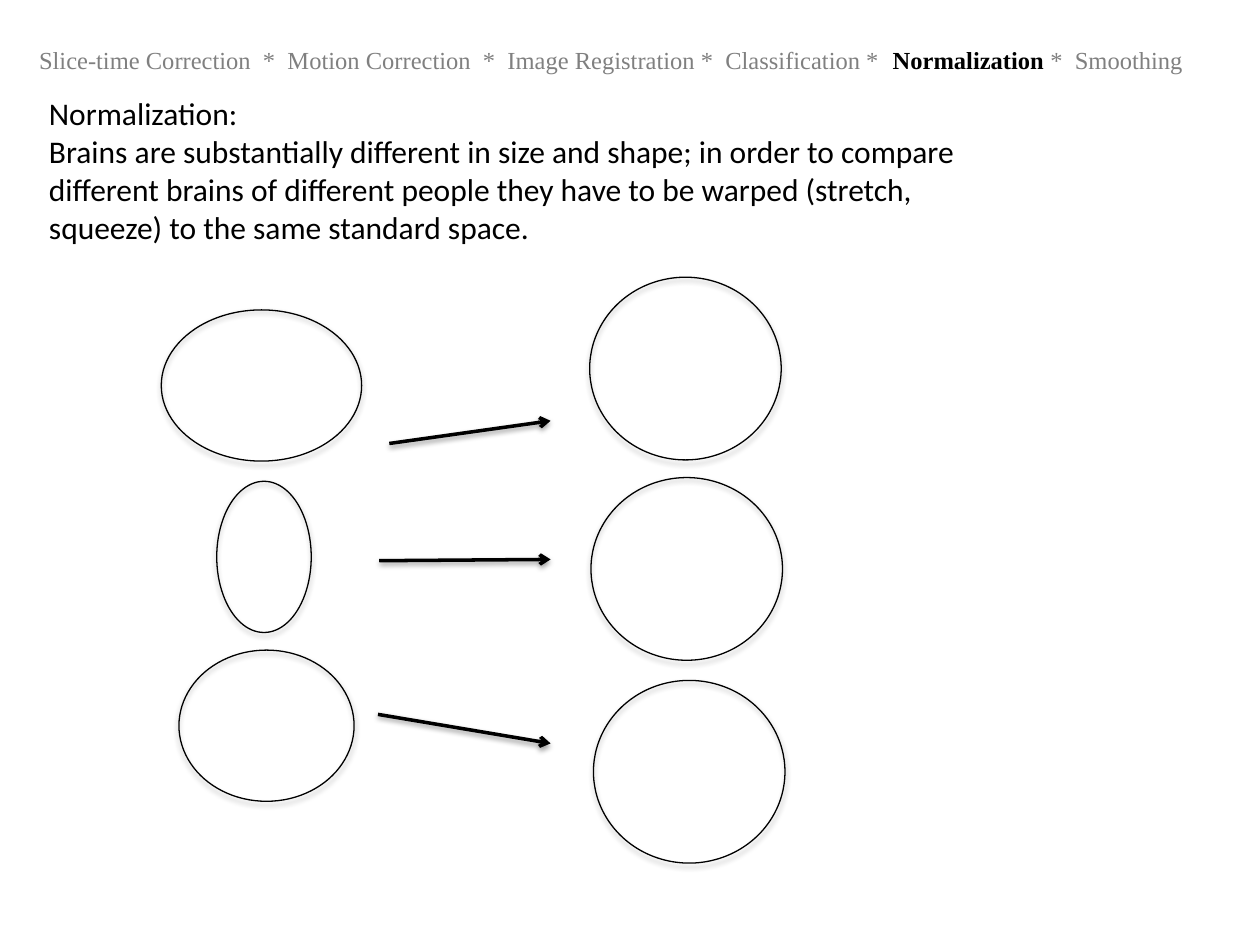
from dataclasses import dataclass

from lxml.etree import SubElement
from pptx import Presentation
from pptx.dml.color import RGBColor
from pptx.enum.shapes import MSO_CONNECTOR, MSO_SHAPE
from pptx.enum.text import MSO_ANCHOR, MSO_AUTO_SIZE, PP_ALIGN
from pptx.oxml.ns import qn
from pptx.util import Inches, Pt


@dataclass(frozen=True)
class Theme:
    ink: RGBColor = RGBColor(0x00, 0x00, 0x00)
    muted: RGBColor = RGBColor(0x80, 0x80, 0x80)
    title_font: str = "Times New Roman"
    body_font: str = "Calibri"
    title_size: Pt = Pt(14)
    body_size: Pt = Pt(18)
    outline: Pt = Pt(0.75)
    arrow: Pt = Pt(2)


class SlideBuilder:
    def __init__(self, slide, theme):
        self.s = slide
        self.theme = theme

    def trail(self, before, current, after, left, top, width, height):
        """Title line listing the processing steps, the current one in bold."""
        sp = self.s.shapes.title
        sp.left, sp.top = Inches(left), Inches(top)
        sp.width, sp.height = Inches(width), Inches(height)
        tf = sp.text_frame
        tf.auto_size = MSO_AUTO_SIZE.NONE
        tf.word_wrap = True
        tf.vertical_anchor = MSO_ANCHOR.MIDDLE
        p = tf.paragraphs[0]
        p.alignment = PP_ALIGN.LEFT
        for text in (before, current, after):
            r = p.add_run()
            r.text = text
            active = text == current
            color = self.theme.ink if active else self.theme.muted
            self.style(r.font, self.theme.title_font, self.theme.title_size, color)
            r.font.bold = active

    def body(self, paragraphs, left, top, width, height):
        sp = self.s.shapes.add_textbox(
            Inches(left), Inches(top), Inches(width), Inches(height))
        tf = sp.text_frame
        tf.word_wrap = True
        tf.auto_size = MSO_AUTO_SIZE.SHAPE_TO_FIT_TEXT
        tf.text = "\n".join(paragraphs)
        for p in tf.paragraphs:
            for r in p.runs:
                self.style(r.font, self.theme.body_font,
                           self.theme.body_size, self.theme.ink)

    def brain(self, left, top, width, height):
        sp = self.s.shapes.add_shape(
            MSO_SHAPE.OVAL, Inches(left), Inches(top), Inches(width), Inches(height))
        sp.fill.background()
        sp.line.color.rgb = self.theme.ink
        sp.line.width = self.theme.outline
        self.shadow(sp, distance=1.8, opacity=35)

    def arrow(self, x1, y1, x2, y2):
        line = self.s.shapes.add_connector(
            MSO_CONNECTOR.STRAIGHT, Inches(x1), Inches(y1), Inches(x2), Inches(y2))
        line.line.color.rgb = self.theme.ink
        line.line.width = self.theme.arrow
        SubElement(line.line._get_or_add_ln(), qn("a:tailEnd"), type="arrow")
        self.shadow(line, distance=1.6, opacity=38)

    @staticmethod
    def style(font, name, size, color):
        font.name = name
        font.size = size
        font.color.rgb = color

    def shadow(self, shape, distance, opacity):
        """Soft shadow straight below the shape."""
        effects = SubElement(shape._element.spPr, qn("a:effectLst"))
        outer = SubElement(effects, qn("a:outerShdw"), blurRad=str(Pt(3.1)),
                           dist=str(Pt(distance)), dir="5400000", rotWithShape="0")
        color = SubElement(outer, qn("a:srgbClr"), val=str(self.theme.ink))
        SubElement(color, qn("a:alpha"), val=str(opacity * 1000))


def main():
    prs = Presentation()
    prs.slide_width, prs.slide_height = Inches(10), Inches(7.5)
    title_only = prs.slide_layouts[5]
    slide = SlideBuilder(prs.slides.add_slide(title_only), Theme())

    # Processing steps and explanation
    slide.trail(
        "Slice-time Correction  *  Motion Correction  *  Image Registration *  "
        "Classification *  ",
        "Normalization", " *  Smoothing", 0.21, 0.19, 11.98, 0.56)
    slide.body(
        ["Normalization:",
         "Brains are substantially different in size and shape; in order to compare "
         "different brains of different people they have to be warped (stretch, "
         "squeeze) to the same standard space."],
        0.29, 0.7, 7.71, 1.31)

    # Each row: individual brain (left, top, width), arrow, standard brain (left, top)
    rows = [
        ((1.28, 2.46, 1.59), (3.09, 3.52, 4.37, 3.34), (4.68, 2.2)),
        ((1.72, 3.82, 0.75), (3.01, 4.45, 4.37, 4.44), (4.69, 3.79)),
        ((1.42, 5.16, 1.39), (3, 5.67, 4.37, 5.9), (4.71, 5.4)),
    ]
    for individual, arrow, standard in rows:
        slide.brain(*individual, 1.2)
        slide.arrow(*arrow)
        slide.brain(*standard, 1.52, 1.45)

    prs.save("out.pptx")


if __name__ == "__main__":
    main()
